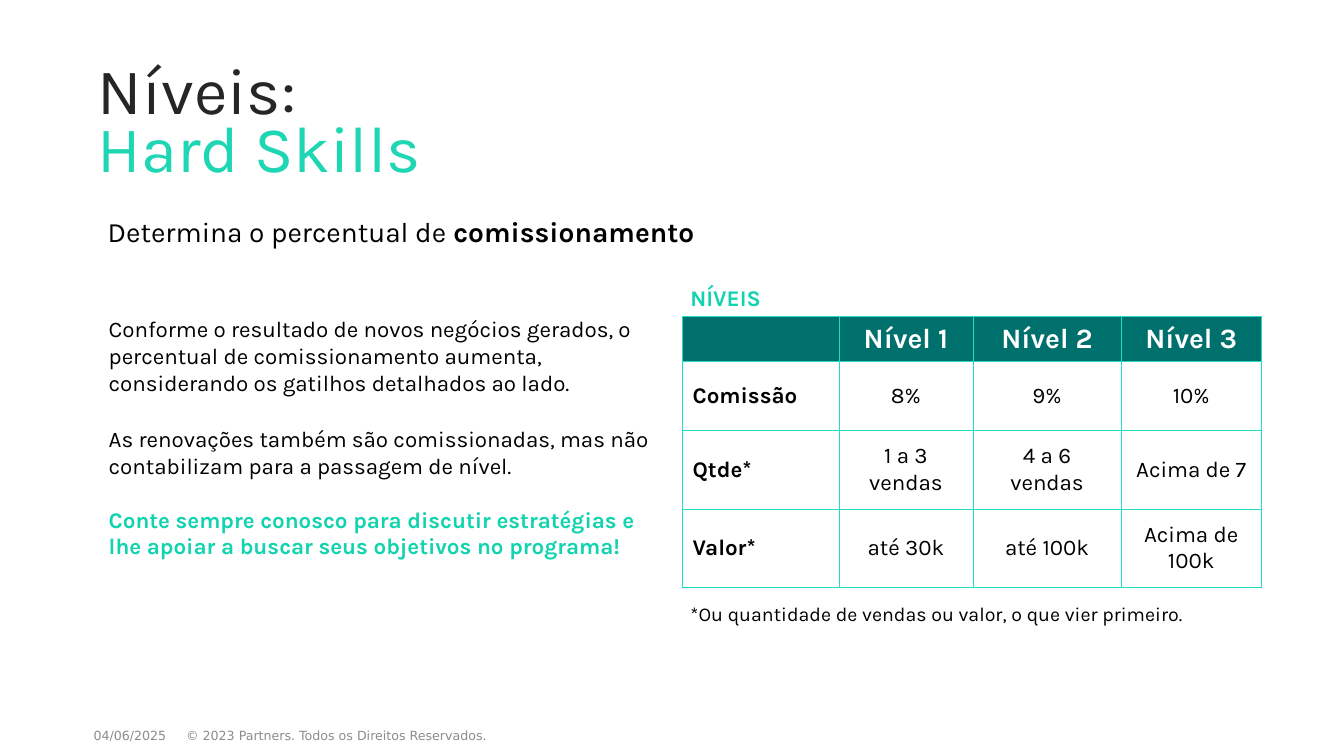
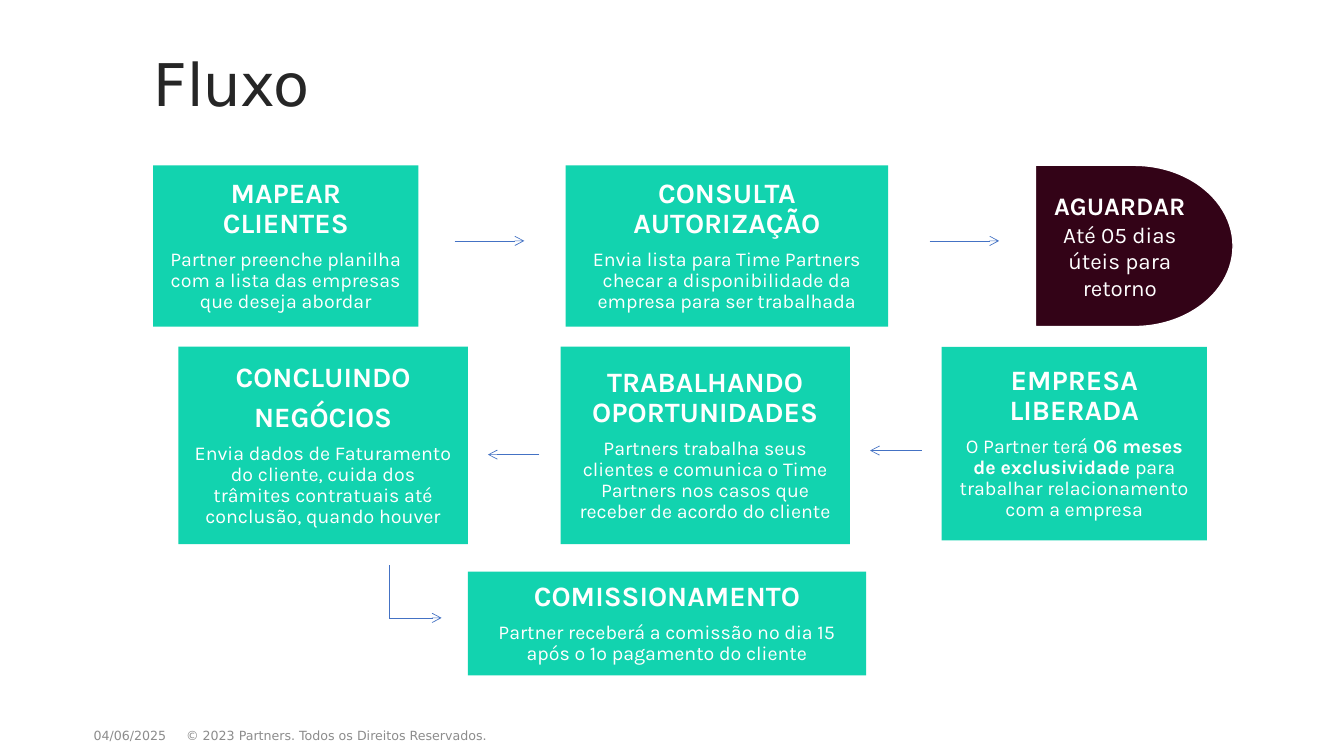
from pptx import Presentation
from pptx.dml.color import RGBColor
from pptx.enum.shapes import MSO_CONNECTOR as Link, MSO_SHAPE as Shape
from pptx.enum.text import MSO_ANCHOR as Anchor, PP_ALIGN as Align
from pptx.oxml.ns import qn
from pptx.util import Emu, Pt
from lxml.etree import SubElement

SCALE = 9144  # EMU in one px, 100 px to the inch
SANS, KARLA = "DejaVu Sans", "Karla"
BLACK, WHITE, INK, GREY = "000000", "FFFFFF", "262626", "8C8C8C"
GREEN, MINT, TEAL = "12D3AF", "1ED6B3", "00706C"
PLUM, EDGE, BLUE = "330317", "21DBC5", "4472C4"
LEFT, MID = Align.LEFT, Align.CENTER

HEADS = ["", "Nível 1", "Nível 2", "Nível 3"]
ROWS = [
    ["Comissão", "8%", "9%", "10%"],
    ["Qtde*", "1 a 3\nvendas", "4 a 6\nvendas", "Acima de 7"],
    ["Valor*", "até 30k", "até 100k", "Acima de 100k"],
]
COLS, HIGHS = [155, 133, 147, 139], [44, 69, 78, 78]

STEPS = [
    ((152, 164, 263, 160), ["MAPEAR CLIENTES"],
     "Partner preenche planilha com a lista das empresas que deseja abordar"),
    ((561, 164, 320, 160), ["CONSULTA AUTORIZAÇÃO"],
     "Envia lista para Time Partners checar a disponibilidade da empresa "
     "para ser trabalhada"),
    ((934, 344, 263, 192), ["EMPRESA LIBERADA"],
     "O Partner terá **06 meses de exclusividade** para trabalhar "
     "relacionamento com a empresa"),
    ((556, 344, 287, 196), ["TRABALHANDO OPORTUNIDADES"],
     "Partners trabalha seus clientes e comunica o Time Partners nos casos "
     "que receber de acordo do cliente"),
    ((177, 344, 287, 196), ["CONCLUINDO", "NEGÓCIOS"],
     "Envia dados de Faturamento do cliente, cuida dos trâmites contratuais "
     "até conclusão, quando houver"),
    ((464, 567, 395, 103), ["COMISSIONAMENTO"],
     "Partner receberá a comissão no dia 15 após o 1º pagamento do cliente"),
]
ARROWS = [
    (451, 239, 520, 239), (922, 239, 991, 239), (914, 447, 863, 447),
    (535, 451, 484, 451), (386, 613, 438, 613),
]


def px(*nums):
    return [Emu(n * SCALE) for n in nums]


def rgb(code):
    return RGBColor.from_string(code)


def write(frame, text, size=16, color=BLACK, font=KARLA, bold=False,
          align=LEFT, line=None, before=None, after=None):
    """Add one paragraph; parts between ** marks are bold."""
    para = frame.paragraphs[0]
    if para.runs:
        para = frame.add_paragraph()
    para.alignment = align
    para.line_spacing, para.space_before, para.space_after = line, before, after
    for i, part in enumerate(text.split("**")):
        run = para.add_run()
        run.text = part
        run.font.size, run.font.name = Pt(size), font
        run.font.bold = bold or i % 2 == 1
        run.font.color.rgb = rgb(color)


def inset(frame, gap):
    side, = px(gap)
    frame.margin_left = frame.margin_right = side
    frame.margin_top = frame.margin_bottom = side


def area(slide, at, gap=None, anchor=Anchor.TOP):
    """Add a wrapping text box and return its frame."""
    frame = slide.shapes.add_textbox(*px(*at)).text_frame
    frame.word_wrap, frame.vertical_anchor = True, anchor
    if gap is not None:
        inset(frame, gap)
    return frame


def block(slide, kind, at, fill, edge=None):
    """Add a filled shape and return its frame."""
    shape = slide.shapes.add_shape(kind, *px(*at))
    shape.shadow.inherit = False
    shape.fill.solid()
    shape.fill.fore_color.rgb = rgb(fill)
    if edge:
        shape.line.color.rgb = rgb(edge)
        shape.line.width = Pt(1)
    else:
        shape.line.fill.background()
    frame = shape.text_frame
    frame.word_wrap, frame.vertical_anchor = True, Anchor.MIDDLE
    return frame


def step(slide, at, heads, body):
    frame = block(slide, Shape.RECTANGLE, at, GREEN)
    inset(frame, 16)
    look = dict(color=WHITE, align=MID, line=0.9)
    for head in heads:
        write(frame, head, size=20, bold=True, after=Pt(7), **look)
    write(frame, body, size=14, after=Pt(5), **look)


def wire(slide, ends, tip=True):
    link = slide.shapes.add_connector(Link.STRAIGHT, *px(*ends))
    link.line.color.rgb = rgb(BLUE)
    link.line.width = Pt(0.5)
    props = link._element.spPr
    if tip:
        SubElement(props.find(qn("a:ln")), qn("a:tailEnd"), type="arrow")
    SubElement(props, qn("a:effectLst"))


def border(cell):
    props = cell._tc.get_or_add_tcPr()
    for i, side in enumerate(("lnL", "lnR", "lnT", "lnB")):
        line = props.makeelement(qn("a:" + side), {"w": str(Pt(0.5))})
        fill = SubElement(line, qn("a:solidFill"))
        SubElement(fill, qn("a:srgbClr"), val=EDGE)
        props.insert(i, line)


def grid(slide, left, top):
    data = [HEADS] + ROWS
    size = px(left, top, sum(COLS), sum(HIGHS))
    table = slide.shapes.add_table(len(data), len(HEADS), *size).table
    for col, wide in zip(table.columns, px(*COLS)):
        col.width = wide
    for row, high in zip(table.rows, px(*HIGHS)):
        row.height = high
    for r, row in enumerate(data):
        for c, text in enumerate(row):
            cell = table.cell(r, c)
            cell.vertical_anchor = Anchor.MIDDLE
            if r:
                cell.fill.background()
            else:
                cell.fill.solid()
                cell.fill.fore_color.rgb = rgb(TEAL)
            border(cell)
            for part in text.split("\n") if text else []:
                write(cell.text_frame, part, size=16 if r else 20,
                      color=BLACK if r else WHITE, bold=not (r and c),
                      align=MID if c else LEFT)


def title(slide, at, *lines, **look):
    frame = area(slide, at, gap=0)
    for text, color in lines:
        write(frame, text, color=color, line=Pt(41), **look)


def page(deck):
    """Add a blank slide with the shared footer."""
    slide = deck.slides.add_slide(deck.slide_layouts[6])
    look = dict(size=9, color=GREY, font=SANS)
    write(area(slide, (83, 710, 96, 40), anchor=Anchor.MIDDLE),
          "04/06/2025", **look)
    write(area(slide, (166, 710, 335, 40), anchor=Anchor.MIDDLE),
          "© 2023 Partners. Todos os Direitos Reservados.", align=MID, **look)
    return slide


def levels(deck):
    slide = page(deck)
    title(slide, (97, 70, 703, 117), ("Níveis:", INK), ("Hard Skills", MINT),
          size=46.5)
    write(area(slide, (97, 208, 1154, 44)),
          "Determina o percentual de **comissionamento**", size=20)
    body = area(slide, (98, 308, 559, 252))
    write(body, "Conforme o resultado de novos negócios gerados, o percentual "
          "de comissionamento aumenta, considerando os gatilhos detalhados "
          "ao lado.")
    write(body, "As renovações também são comissionadas, mas não contabilizam "
          "para a passagem de nível.", before=Pt(21))
    write(body, "Conte sempre conosco para discutir estratégias e lhe apoiar "
          "a buscar seus objetivos no programa!", color=GREEN, bold=True,
          before=Pt(19))
    write(area(slide, (675, 277, 474, 37)), "NÍVEIS", color=GREEN, bold=True)
    grid(slide, 677, 314)
    write(area(slide, (675, 592, 650, 34)),
          "*Ou quantidade de vendas ou valor, o que vier primeiro.", size=14)


def flow(deck):
    slide = page(deck)
    title(slide, (152, 60, 858, 60), ("Fluxo", INK), size=42, font=SANS)
    for item in STEPS:
        step(slide, *item)
    wait = block(slide, Shape.FLOWCHART_DELAY, (1027, 164, 196, 160),
                 PLUM, edge=WHITE)
    write(wait, "AGUARDAR", size=18, color=WHITE, bold=True, align=MID)
    write(wait, "Até 05 dias úteis para retorno", color=WHITE, align=MID)
    for ends in ARROWS:
        wire(slide, ends)
    wire(slide, (386, 561, 386, 613), tip=False)


def main():
    deck = Presentation()
    deck.slide_width, deck.slide_height = px(1333, 750)
    levels(deck)
    flow(deck)
    deck.save("out.pptx")


if __name__ == "__main__":
    main()
